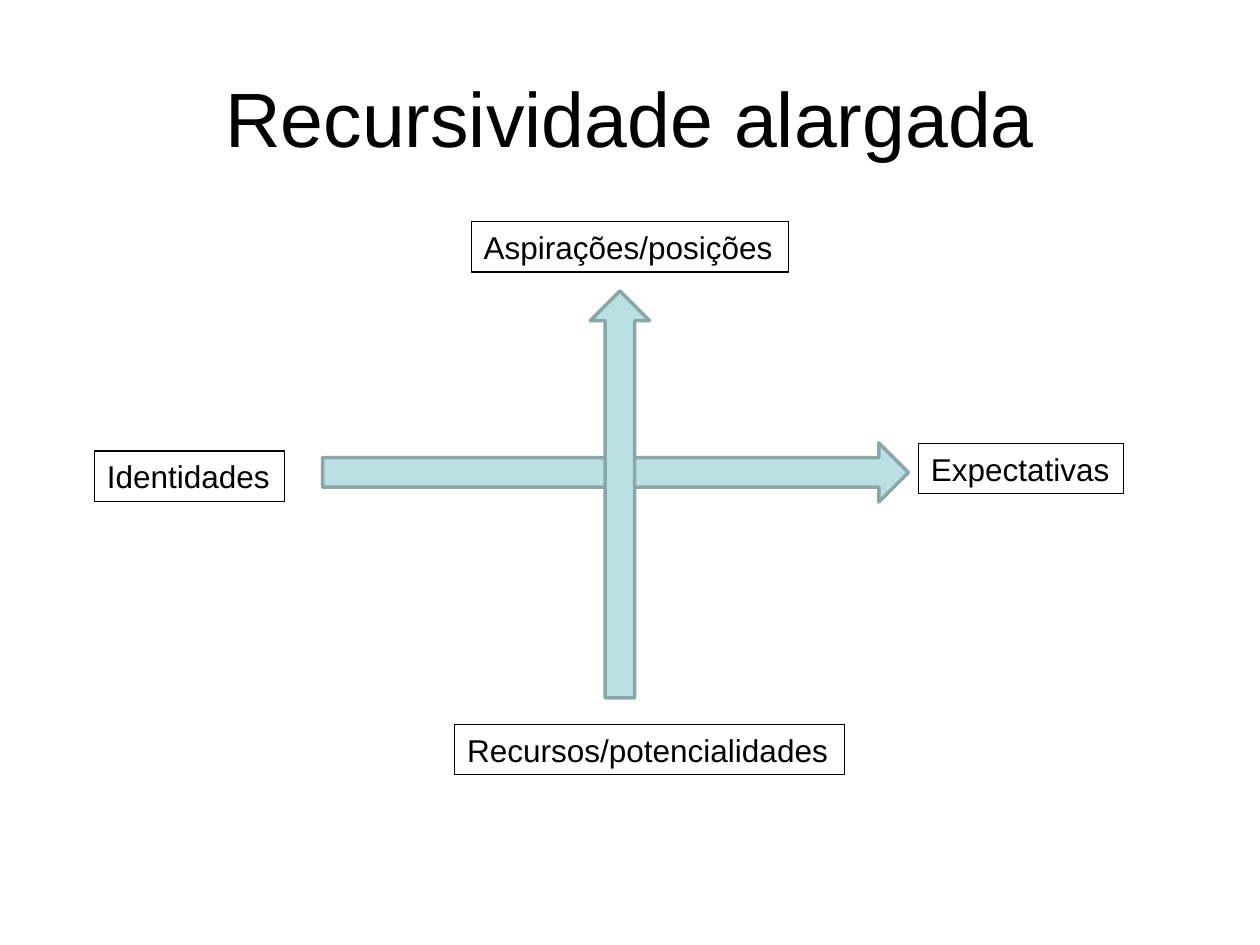
from pptx import Presentation
from pptx.dml.color import RGBColor
from pptx.enum.shapes import MSO_SHAPE as SHAPE
from pptx.enum.text import MSO_ANCHOR as ANCHOR, MSO_AUTO_SIZE as AUTO_SIZE, PP_ALIGN as ALIGN
from pptx.util import Inches, Pt

BLACK = RGBColor(0x00, 0x00, 0x00)
AQUA = RGBColor(0xBB, 0xE0, 0xE3)
TEAL = RGBColor(0x8A, 0xA6, 0xA8)

deck = Presentation()
deck.slide_width, deck.slide_height = Inches(10), Inches(7.5)
slide = deck.slides.add_slide(deck.slide_layouts[5])


def write(frame, text, size=18, align=ALIGN.LEFT, anchor=ANCHOR.TOP, wrap=False):
    frame.text = text
    frame.word_wrap = wrap
    frame.vertical_anchor = anchor
    paragraph = frame.paragraphs[0]
    paragraph.alignment = align
    paragraph.font.name = "Arial"
    paragraph.font.size = Pt(size)
    paragraph.font.color.rgb = BLACK


heading = slide.shapes.title
heading.left, heading.top = int(deck.slide_width * 0.05), int(deck.slide_height * 0.04)
heading.width, heading.height = int(deck.slide_width * 0.9), Inches(1.25)
write(heading.text_frame, "Recursividade alargada", size=44,
      align=ALIGN.CENTER, anchor=ANCHOR.MIDDLE, wrap=True)

AXIS_X, AXIS_Y = 4.92, 3.75
THICKNESS = 0.47
axes = [
    (SHAPE.RIGHT_ARROW, 2.56, AXIS_Y - THICKNESS / 2, 4.65, THICKNESS),
    (SHAPE.UP_ARROW, AXIS_X - THICKNESS / 2, 2.31, THICKNESS, 3.23),
]
for kind, *box in axes:
    axis = slide.shapes.add_shape(kind, *map(Inches, box))
    axis.shadow.inherit = False
    axis.fill.solid()
    axis.fill.fore_color.rgb = AQUA
    axis.line.color.rgb = TEAL
    axis.line.width = Pt(2)

LABEL_HEIGHT = 0.4
poles = [
    ("Identidades", 0.75, 3.58, 1.51),
    ("Expectativas", 7.29, 3.52, 1.63),
    ("Recursos/potencialidades", 3.61, 5.75, 3.09),
    ("Aspirações/posições", 3.74, 1.76, 2.52),
]
for text, left, top, width in poles:
    pole = slide.shapes.add_textbox(*map(Inches, (left, top, width, LABEL_HEIGHT)))
    pole.line.color.rgb = BLACK
    pole.line.width = Pt(0.75)
    write(pole.text_frame, text)
    pole.text_frame.auto_size = AUTO_SIZE.SHAPE_TO_FIT_TEXT

deck.save("out.pptx")
